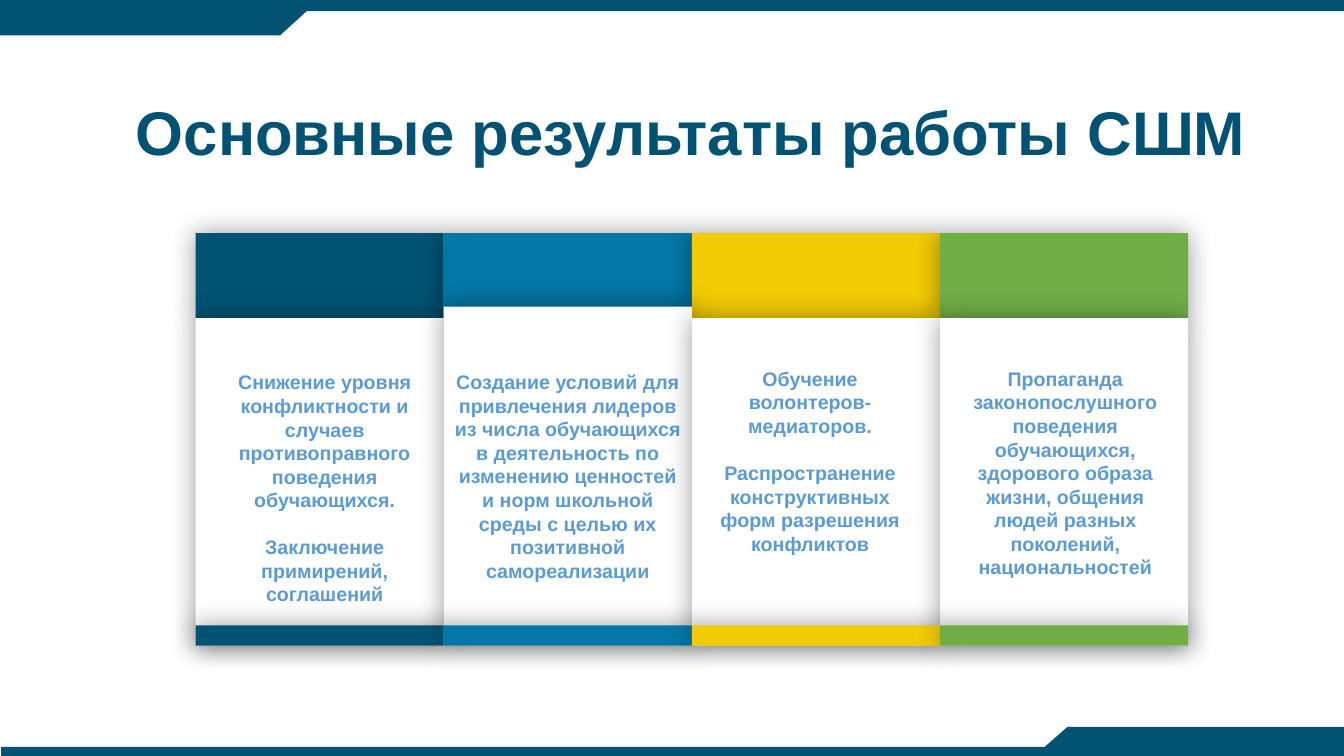
from dataclasses import dataclass

from lxml import etree
from pptx import Presentation
from pptx.dml.color import RGBColor
from pptx.enum.shapes import MSO_SHAPE
from pptx.enum.text import MSO_ANCHOR, PP_ALIGN
from pptx.oxml.ns import qn
from pptx.util import Pt

NAVY = RGBColor(0x02, 0x53, 0x73)
BLUE = RGBColor(0x03, 0x78, 0xA6)
YELLOW = RGBColor(0xF2, 0xCB, 0x05)
GREEN = RGBColor(0x70, 0xAD, 0x47)
WHITE = RGBColor(0xFF, 0xFF, 0xFF)
TEXT_BLUE = RGBColor(0x5B, 0x9B, 0xD5)

SLIDE_WIDTH, SLIDE_HEIGHT = 960, 540
BAR_HEIGHT = 7.9
TAB_WIDTH, TAB_HEIGHT, SLANT_WIDTH = 200, 21.6, 47.4
HEADER_HEIGHT, FOOTER_HEIGHT = 60.6, 14.4
LINE_HEIGHT = 16.8


@dataclass
class Column:
    color: RGBColor
    paragraphs: list
    text_left: float
    text_top: float
    text_width: float
    body_top: float = HEADER_HEIGHT
    text_in_body: bool = False


COLUMNS = [
    Column(NAVY, [
        "Снижение уровня конфликтности и случаев противоправного поведения обучающихся.",
        "Заключение примирений, соглашений",
    ], 17.3, 94.4, 149.8),
    Column(BLUE, [
        "Создание условий для привлечения лидеров из числа обучающихся в деятельность "
        "по изменению ценностей и норм школьной среды с целью их позитивной самореализации",
    ], 0, 0, 0, body_top=52.4, text_in_body=True),
    Column(YELLOW, [
        "Обучение волонтеров-медиаторов.",
        "Распространение конструктивных форм разрешения конфликтов",
    ], 12.8, 91.9, 143.3),
    Column(GREEN, [
        "Пропаганда законопослушного поведения обучающихся, здорового образа жизни, "
        "общения людей разных поколений, национальностей",
    ], 13.2, 91.9, 152.6),
]


def add_shadow(shape):
    effects = shape._element.spPr.find(qn("a:effectLst"))
    shadow = etree.SubElement(effects, qn("a:outerShdw"), blurRad=str(Pt(19)),
                              dist="0", dir="0", algn="ctr", rotWithShape="0")
    color = etree.SubElement(shadow, qn("a:srgbClr"), val="000000")
    etree.SubElement(color, qn("a:alpha"), val="40000")


def add_block(slide, left, top, width, height, color,
              kind=MSO_SHAPE.RECTANGLE, shadow=False):
    shape = slide.shapes.add_shape(kind, Pt(left), Pt(top), Pt(width), Pt(height))
    shape.shadow.inherit = False
    shape.fill.solid()
    shape.fill.fore_color.rgb = color
    shape.line.fill.background()
    if shadow:
        add_shadow(shape)
    return shape


def write_text(shape, paragraphs, size=14, color=TEXT_BLUE, anchor=MSO_ANCHOR.TOP,
               gap=LINE_HEIGHT, line_spacing=None):
    frame = shape.text_frame
    frame.word_wrap = True
    frame.vertical_anchor = anchor
    for index, text in enumerate(paragraphs):
        paragraph = frame.add_paragraph() if index else frame.paragraphs[0]
        paragraph.alignment = PP_ALIGN.CENTER
        paragraph.line_spacing = line_spacing
        if index:
            paragraph.space_before = Pt(gap)
        run = paragraph.add_run()
        run.text = text
        run.font.name = "Arial"
        run.font.size = Pt(size)
        run.font.bold = True
        run.font.color.rgb = color


def add_text(slide, left, top, width, height, paragraphs, **text_format):
    box = slide.shapes.add_textbox(Pt(left), Pt(top), Pt(width), Pt(height))
    write_text(box, paragraphs, **text_format)


def add_top_band(slide, left, top, width):
    add_block(slide, left, top, width, BAR_HEIGHT, NAVY)
    tab_top = top + 3.8
    add_block(slide, left, tab_top, TAB_WIDTH, TAB_HEIGHT, NAVY)
    add_block(slide, left + TAB_WIDTH - SLANT_WIDTH / 2, tab_top,
              SLANT_WIDTH, TAB_HEIGHT, NAVY, MSO_SHAPE.FLOWCHART_MERGE)


def add_bottom_band(slide, left, bottom, width):
    add_block(slide, left + 0.8, bottom - 6.6, width - 0.8, 6.6, NAVY)
    tab_left = left + width - 197.5
    tab_top = bottom - 20.8
    add_block(slide, tab_left, tab_top, 197.5, 20.8, NAVY)
    slant = add_block(slide, tab_left - SLANT_WIDTH / 2, tab_top,
                      SLANT_WIDTH, 20.8, NAVY, MSO_SHAPE.FLOWCHART_MERGE)
    slant.rotation = 180


def add_columns(slide, left, top, width, height):
    column_width = width / len(COLUMNS)
    placed = [(left + index * column_width, column)
              for index, column in enumerate(COLUMNS)]
    for x, column in placed:
        add_block(slide, x, top, column_width, HEADER_HEIGHT, column.color, shadow=True)
    for x, column in placed:
        body = add_block(slide, x, top + column.body_top, column_width,
                         height - column.body_top, WHITE, shadow=True)
        if column.text_in_body:
            write_text(body, column.paragraphs, anchor=MSO_ANCHOR.MIDDLE)
    for x, column in placed:
        add_block(slide, x, top + height - FOOTER_HEIGHT, column_width,
                  FOOTER_HEIGHT, column.color, shadow=True)
    for x, column in placed:
        if not column.text_in_body:
            add_text(slide, x + column.text_left, top + column.text_top,
                     column.text_width, height - FOOTER_HEIGHT - column.text_top,
                     column.paragraphs)


def main():
    presentation = Presentation()
    presentation.slide_width = Pt(SLIDE_WIDTH)
    presentation.slide_height = Pt(SLIDE_HEIGHT)
    slide = presentation.slides.add_slide(presentation.slide_layouts[6])
    add_top_band(slide, 0, 0, SLIDE_WIDTH)
    add_bottom_band(slide, 0, SLIDE_HEIGHT, SLIDE_WIDTH)
    add_text(slide, 79.9, 44.6, 828, 104.4, ["Основные результаты работы СШМ"],
             size=44, color=NAVY, anchor=MSO_ANCHOR.MIDDLE, line_spacing=0.9)
    add_columns(slide, 139.7, 166.6, 709, 294.6)
    presentation.save("out.pptx")


if __name__ == "__main__":
    main()
